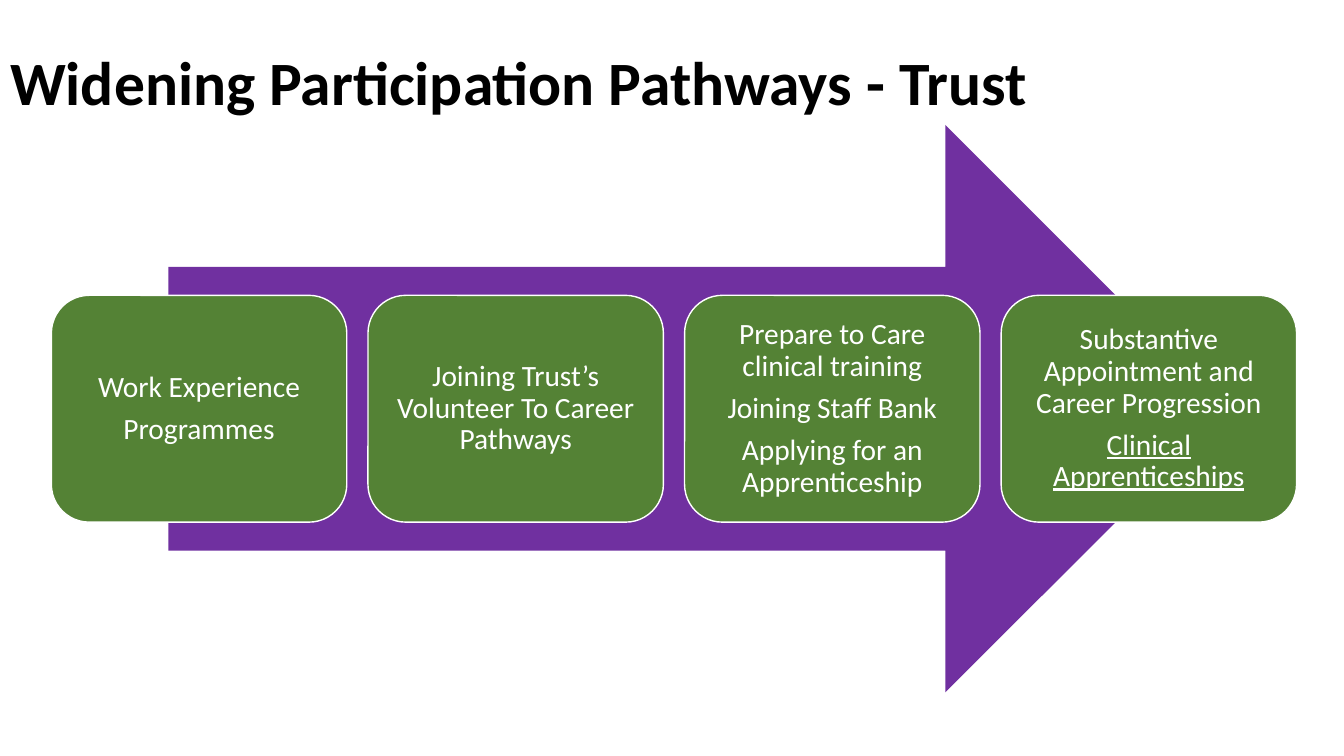
from pptx import Presentation
from pptx.dml.color import RGBColor
from pptx.enum.shapes import MSO_SHAPE
from pptx.enum.text import MSO_ANCHOR, PP_ALIGN
from pptx.util import Inches, Pt

ARROW, CARD = MSO_SHAPE.RIGHT_ARROW, MSO_SHAPE.ROUNDED_RECTANGLE
MIDDLE = MSO_ANCHOR.MIDDLE
LEFT, CENTER = PP_ALIGN.LEFT, PP_ALIGN.CENTER

TITLE = "Widening Participation Pathways - Trust"
STAGES = [
    ["Work Experience", "Programmes"],
    ["Joining Trust’s Volunteer To Career Pathways"],
    ["Prepare to Care clinical training", "Joining Staff Bank",
     "Applying for an Apprenticeship"],
    ["Substantive Appointment and Career Progression",
     "Clinical Apprenticeships"],
]
UNDERLINED = {"Clinical Apprenticeships"}

THEME = {
    "arrow": RGBColor(0x70, 0x30, 0xA0),
    "card": RGBColor(0x54, 0x82, 0x35),
    "outline": RGBColor(0xFF, 0xFF, 0xFF),
    "title": {"name": "Calibri", "size": Pt(44), "bold": True},
    "title_color": RGBColor(0, 0, 0),
    "body": {"name": "Calibri", "size": Pt(21)},
    "body_color": RGBColor(0xFF, 0xFF, 0xFF),
}
FRAME = {"word_wrap": True, "vertical_anchor": MIDDLE}
CARD_INSETS = {f"margin_{side}": Inches(0.09)
               for side in ("left", "top", "right", "bottom")}

TITLE_BOX = (0, 0, 12.61, 1.7)
ARROW_BOX = (1.67, 1.24, 10.52, 5.63)
CARD_LEFT, CARD_W, CARD_H, CARD_GAP = 0.51, 2.93, 2.25, 0.21


def set_all(target, values):
    for name, value in values.items():
        setattr(target, name, value)


def add_shape(slide, kind, box, fill):
    sp = slide.shapes.add_shape(kind, *map(Inches, box))
    sp.shadow.inherit = False
    sp.fill.solid()
    sp.fill.fore_color.rgb = fill
    sp.line.fill.background()
    return sp


def write(tf, lines, style, align):
    for i, line in enumerate(lines):
        p = tf.paragraphs[0] if i == 0 else tf.add_paragraph()
        p.alignment, p.line_spacing = align, 0.9
        p.space_before = Pt(7.35 if i else 0)
        r = p.add_run()
        r.text = line
        set_all(r.font, THEME[style])
        r.font.color.rgb = THEME[style + "_color"]
        if line in UNDERLINED:
            r.font.underline = True


def main():
    prs = Presentation()
    prs.slide_width, prs.slide_height = Inches(13.33), Inches(7.5)
    s = prs.slides.add_slide(prs.slide_layouts[5])

    title = s.shapes.title
    set_all(title, dict(zip(("left", "top", "width", "height"),
                            map(Inches, TITLE_BOX))))
    set_all(title.text_frame, FRAME)
    write(title.text_frame, [TITLE], "title", LEFT)

    add_shape(s, ARROW, ARROW_BOX, THEME["arrow"])

    card_top = ARROW_BOX[1] + (ARROW_BOX[3] - CARD_H) / 2
    for i, lines in enumerate(STAGES):
        left = CARD_LEFT + i * (CARD_W + CARD_GAP)
        sp = add_shape(s, CARD, (left, card_top, CARD_W, CARD_H), THEME["card"])
        sp.line.color.rgb = THEME["outline"]
        sp.line.width = Pt(1)
        set_all(sp.text_frame, {**FRAME, **CARD_INSETS})
        write(sp.text_frame, lines, "body", CENTER)

    prs.save("out.pptx")


if __name__ == "__main__":
    main()
